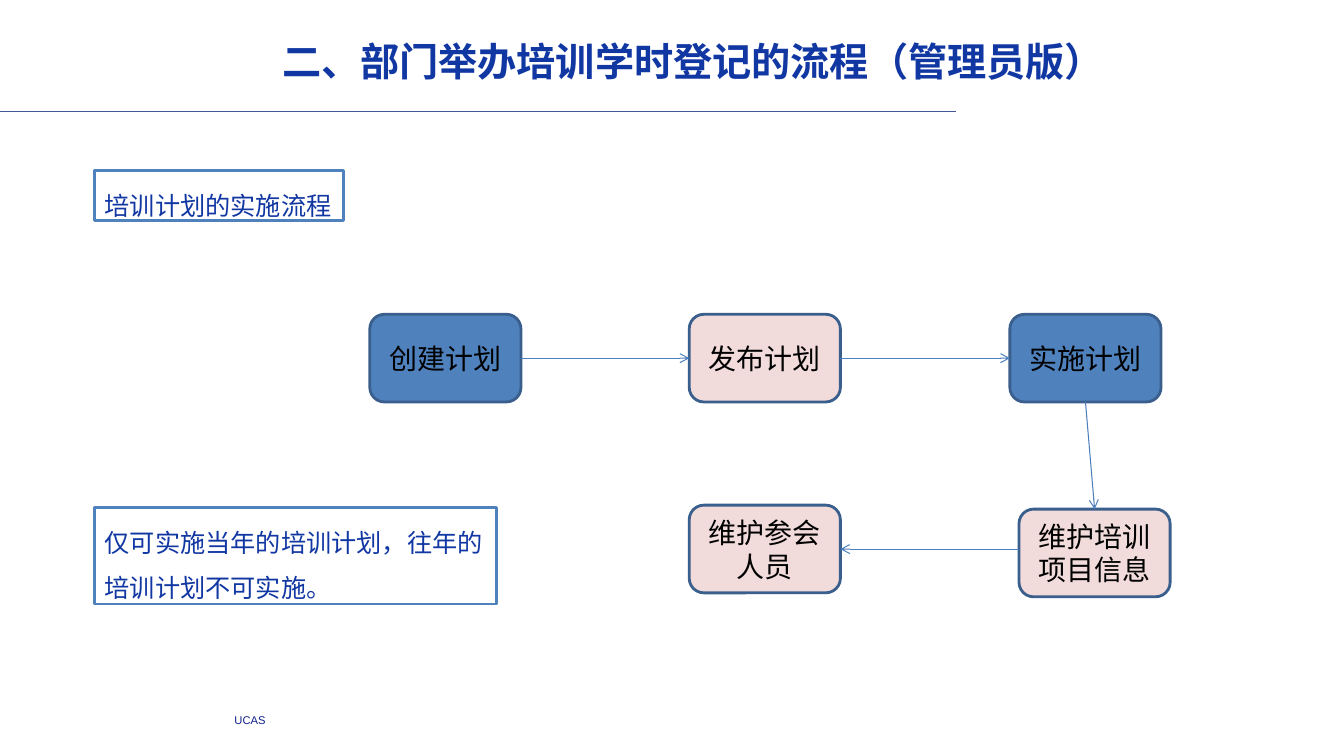
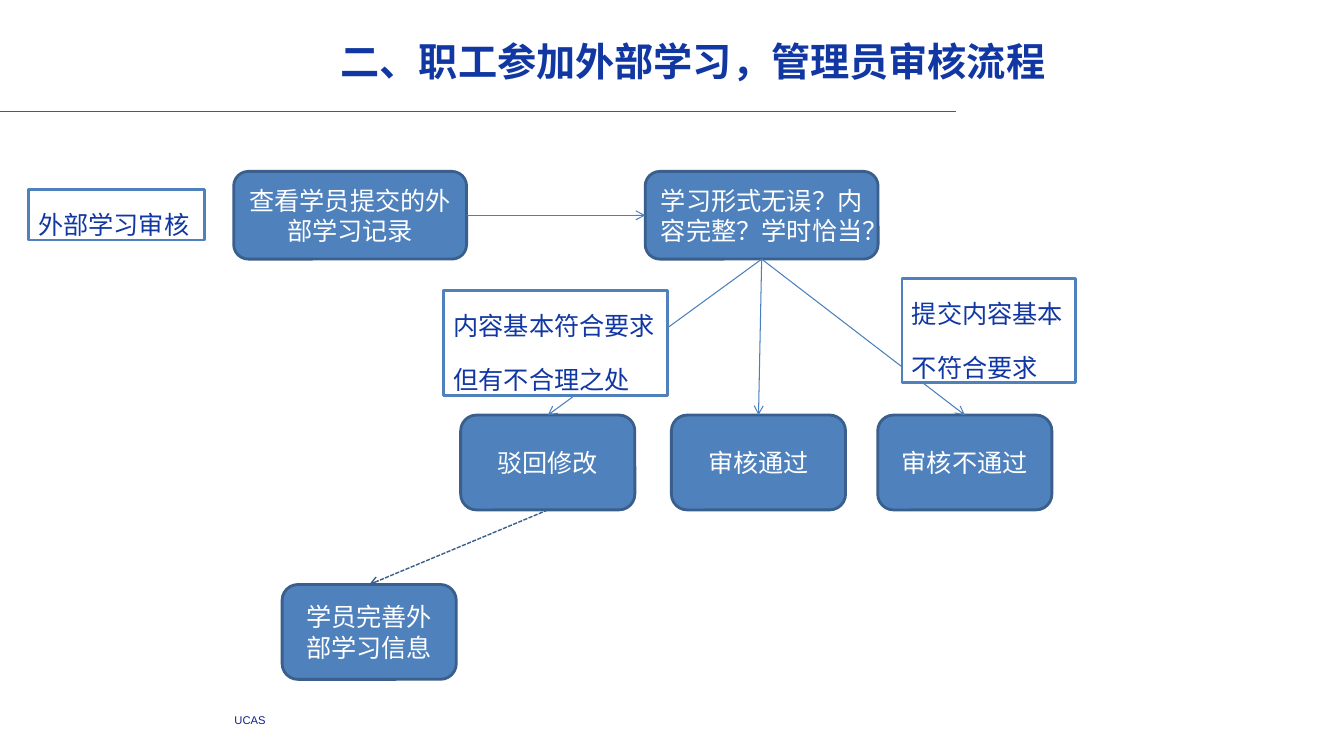
from lxml import etree
from pptx import Presentation
from pptx import util as u
from pptx.dml.color import RGBColor
from pptx.enum import dml, shapes, text
from pptx.oxml import ns

TITLE_BLUE = RGBColor(0x11, 0x37, 0xA3)
FOOTER_BLUE = RGBColor(0x0F, 0x20, 0x8B)
RULE_BLUE = RGBColor(0x41, 0x58, 0x98)
STEP_BLUE = RGBColor(0x4F, 0x81, 0xBD)
STEP_EDGE = RGBColor(0x3A, 0x5F, 0x8C)
ARROW_BLUE = RGBColor(0x4B, 0x7E, 0xBC)
PINK = RGBColor(0xF2, 0xDC, 0xDB)
WHITE = RGBColor(0xFF, 0xFF, 0xFF)
BLACK = RGBColor(0x00, 0x00, 0x00)

# Connection sites of a rounded rectangle
TOP, LEFT, BOTTOM, RIGHT = range(4)

# Each step: left, top, fill, text; each arrow: from, site, to, site
# A start site of None keeps the arrow level with its end
PAGES = [
    {
        "title": "二、部门举办培训学时登记的流程（管理员版）",
        "step_font": (20, BLACK),
        "steps": {
            "create": (9.32, 7.92, 3.81, 2.21, STEP_BLUE, "创建计划"),
            "publish": (17.37, 7.92, 3.81, 2.21, PINK, "发布计划"),
            "carry out": (25.45, 7.92, 3.81, 2.21, STEP_BLUE, "实施计划"),
            "details": (25.68, 12.83, 3.81, 2.21, PINK, "维护培训项目信息"),
            "people": (17.37, 12.73, 3.81, 2.21, PINK, "维护参会人员"),
        },
        "arrows": [
            ("create", RIGHT, "publish", LEFT),
            ("publish", RIGHT, "carry out", LEFT),
            ("carry out", BOTTOM, "details", TOP),
            ("details", None, "people", RIGHT),
        ],
        "dashed": [],
        "notes": [
            (2.39, 4.29, 6.27, 1.27, "培训计划的实施流程"),
            (2.39, 12.78, 10.13, 2.44, "仅可实施当年的培训计划，往年的培训计划不可实施。"),
        ],
    },
    {
        "title": "二、职工参加外部学习，管理员审核流程",
        "step_font": (18, WHITE),
        "steps": {
            "view": (5.89, 4.32, 5.87, 2.21, STEP_BLUE, "查看学员提交的外部学习记录"),
            "check": (16.26, 4.32, 5.87, 2.21, STEP_BLUE, "学习形式无误？内容完整？学时恰当？"),
            "return": (11.61, 10.46, 4.39, 2.39, STEP_BLUE, "驳回修改"),
            "pass": (16.92, 10.46, 4.39, 2.39, STEP_BLUE, "审核通过"),
            "fail": (22.12, 10.46, 4.39, 2.39, STEP_BLUE, "审核不通过"),
            "complete": (7.11, 14.73, 4.39, 2.39, STEP_BLUE, "学员完善外部学习信息"),
        },
        "arrows": [
            ("view", RIGHT, "check", LEFT),
            ("check", BOTTOM, "return", TOP),
            ("check", BOTTOM, "pass", TOP),
            ("check", BOTTOM, "fail", TOP),
        ],
        "dashed": [("return", BOTTOM, "complete", TOP)],
        "notes": [
            (0.71, 4.78, 4.45, 1.27, "外部学习审核"),
            (11.18, 7.32, 5.64, 2.64, "内容基本符合要求\n但有不合理之处"),
            (22.73, 7.01, 4.37, 2.64, "提交内容基本\n不符合要求"),
        ],
    },
]


def write(box, words, font, size, color, align=text.PP_ALIGN.LEFT, bold=False):
    frame = box.text_frame
    frame.word_wrap = True
    frame.text = words
    for para in frame.paragraphs:
        para.alignment = align
        for span in para.runs:
            span.font.name = font
            span.font.size = u.Pt(size)
            span.font.bold = bold
            span.font.color.rgb = color


def add_line(page, ends, color, width, arrow=True):
    line = page.shapes.add_connector(shapes.MSO_CONNECTOR.STRAIGHT, *ends)
    line.line.color.rgb = color
    line.line.width = u.Pt(width)
    if arrow:
        etree.SubElement(line.line._get_or_add_ln(), ns.qn("a:tailEnd"), type="arrow")
    etree.SubElement(line._element.spPr, ns.qn("a:effectLst"))
    return line


deck = Presentation()
deck.slide_width, deck.slide_height = u.Cm(33.87), u.Cm(19.05)

for content in PAGES:
    page = deck.slides.add_slide(deck.slide_layouts[6])

    # Rule, footer and title
    add_line(page, (u.Cm(0), u.Cm(2.82), u.Cm(24.08), u.Cm(2.82)), RULE_BLUE, 0.78, arrow=False)
    footer = page.shapes.add_textbox(u.Cm(5.66), u.Cm(17.86), u.Cm(1.88), u.Cm(0.61))
    write(footer, "UCAS", "Arial", 8, FOOTER_BLUE)
    title = page.shapes.add_textbox(u.Cm(1.07), u.Cm(0.81), u.Cm(32.79), u.Cm(1.45))
    write(title, content["title"], "Times New Roman", 28, TITLE_BLUE, text.PP_ALIGN.CENTER, bold=True)

    # Steps
    steps = {}
    size, color = content["step_font"]
    for name, (*place, fill, words) in content["steps"].items():
        step = page.shapes.add_shape(shapes.MSO_SHAPE.ROUNDED_RECTANGLE, *map(u.Cm, place))
        step.shadow.inherit = False
        step.fill.solid()
        step.fill.fore_color.rgb = fill
        step.line.color.rgb = STEP_EDGE
        step.line.width = u.Pt(2)
        write(step, words, "Arial", size, color, text.PP_ALIGN.CENTER)
        steps[name] = step

    # Arrows
    for start, start_site, end, end_site in content["arrows"] + content["dashed"]:
        dashed = (start, start_site, end, end_site) in content["dashed"]
        arrow = add_line(page, (0, 0, 0, 0), STEP_EDGE if dashed else ARROW_BLUE, 1 if dashed else 0.75)
        if dashed:
            arrow.line.dash_style = dml.MSO_LINE.SQUARE_DOT
        arrow.end_connect(steps[end], end_site)
        if start_site is None:
            arrow.begin_x, arrow.begin_y = steps[start].left, arrow.end_y
        else:
            arrow.begin_connect(steps[start], start_site)

    # Notes
    for *place, words in content["notes"]:
        note = page.shapes.add_shape(shapes.MSO_SHAPE.RECTANGLE, *map(u.Cm, place))
        note.shadow.inherit = False
        note.fill.solid()
        note.fill.fore_color.rgb = WHITE
        note.line.color.rgb = STEP_BLUE
        note.line.width = u.Pt(2)
        note.text_frame.vertical_anchor = text.MSO_ANCHOR.TOP
        write(note, words, "Noto Sans CJK SC", 18, TITLE_BLUE)
        for para in note.text_frame.paragraphs:
            para.line_spacing = 1.5
            para.space_after = u.Pt(6)

deck.save("out.pptx")
